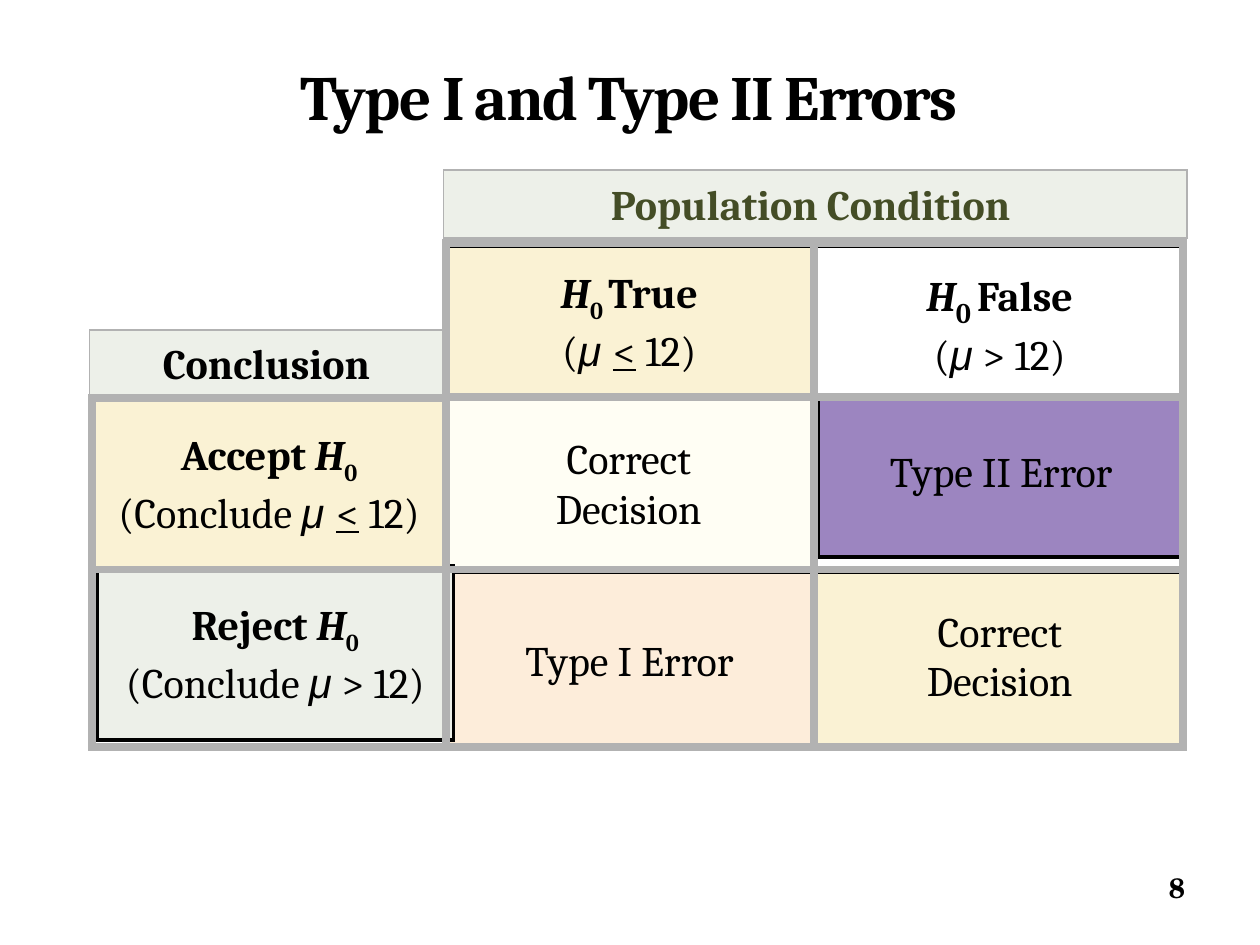
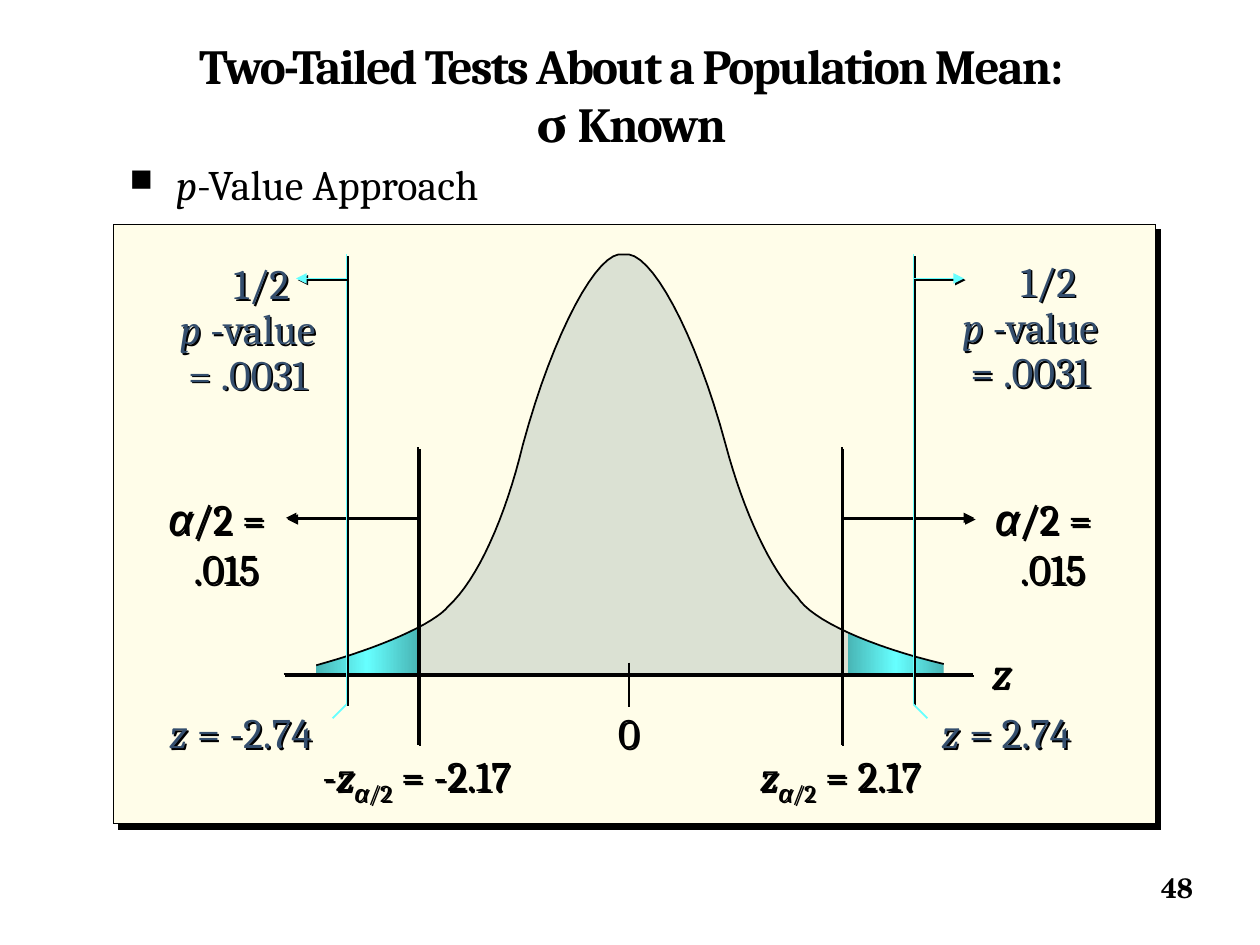
import copy
from dataclasses import dataclass

import lxml.etree
import pptx
import pptx.dml.color
import pptx.enum.shapes
import pptx.enum.text
import pptx.oxml.ns
import pptx.util

Inches = pptx.util.Inches
Pt = pptx.util.Pt
qn = pptx.oxml.ns.qn
ALIGN = pptx.enum.text.PP_ALIGN
ANCHOR = pptx.enum.text.MSO_ANCHOR
RECTANGLE = pptx.enum.shapes.MSO_SHAPE.RECTANGLE
STRAIGHT = pptx.enum.shapes.MSO_CONNECTOR.STRAIGHT


@dataclass(frozen=True)
class Theme:
    serif: str = "Cambria"
    greek: str = "Arial"
    number_font: str = "TeX Gyre Schola"
    title: int = 36
    long_title: int = 28
    body: int = 24
    axis: int = 26
    large_subscript: int = 28
    page_number: int = 16
    black: str = "000000"
    white: str = "FFFFFF"
    grid: str = "B2B2B2"
    sage: str = "EDF0E9"
    cream: str = "FAF2D4"
    ivory: str = "FFFEF4"
    peach: str = "FDEDDA"
    purple: str = "9C85C0"
    olive: str = "444D26"
    panel: str = "FFFDE9"
    bell: str = "DBE1D3"
    cyan: str = "66FFFF"
    teal: str = "49B6B6"
    navy: str = "344E6D"


THEME = Theme()
CENTER = 5.0
BASELINE = 5.35
CRITICAL = 1.68
OBSERVED = 2.25
BELL_KNOTS = [
    (2.51, 5.28), (3.02, 5.14), (3.45, 4.95), (3.56, 4.81),
    (3.79, 4.6), (4.01, 4.11), (4.15, 3.53),
    (4.39, 2.64), (4.75, 1.97), (4.95, 2.02),
    (5.16, 1.97), (5.52, 2.64), (5.76, 3.53),
    (5.9, 4.06), (6.12, 4.53), (6.33, 4.74),
    (6.44, 4.92), (6.9, 5.13), (7.49, 5.27),
]


def rgb(value):
    return pptx.dml.color.RGBColor.from_string(value)


def lengths(values):
    return [Inches(value) for value in values]


def add_effects(shape, shadow=None):
    effects = lxml.etree.SubElement(shape._element.spPr, qn("a:effectLst"))
    if shadow:
        outer = lxml.etree.SubElement(
            effects, qn("a:outerShdw"), blurRad="0", dist=str(Pt(shadow)),
            dir="2700000", algn="tl", rotWithShape="0")
        lxml.etree.SubElement(outer, qn("a:srgbClr"), val=THEME.black)


def write(frame, paragraphs, size=THEME.body, color=THEME.black, anchor=ANCHOR.TOP,
          align=ALIGN.CENTER, spacing=None, font=THEME.serif):
    frame.word_wrap = False
    frame.auto_size = pptx.enum.text.MSO_AUTO_SIZE.NONE
    frame.vertical_anchor = anchor
    for index, spans in enumerate(paragraphs):
        para = frame.paragraphs[0] if index == 0 else frame.add_paragraph()
        para.alignment = align
        if spacing:
            para.line_spacing = spacing
        for text, flags in spans:
            span = para.add_run()
            span.text = text
            span.font.name = THEME.greek if "g" in flags else font
            span.font.size = Pt(THEME.large_subscript if "L" in flags else size)
            span.font.color.rgb = rgb(color)
            span.font.bold = "b" in flags
            span.font.italic = "i" in flags
            span.font.underline = "u" in flags
            if "s" in flags:
                span.font._element.set("baseline", "-25000")


def add_title(page, lines, area, size):
    title = page.shapes.title
    title.left, title.top, title.width, title.height = lengths(area)
    write(title.text_frame, lines, size, anchor=ANCHOR.MIDDLE)
    for para in title.text_frame.paragraphs:
        for span in para.runs:
            span.font._element.set("spc", "-100")
            if span.text.startswith("σ"):
                span.font.name = THEME.number_font


def add_label(page, area, paragraphs, shadow=1.4, **style):
    box = page.shapes.add_textbox(*lengths(area))
    write(box.text_frame, paragraphs, **style)
    if shadow:
        add_effects(box, shadow)
    return box


def add_page_number(page, number):
    add_label(page, (9.07, 6.86, 0.54, 0.37), [[(number, "b")]], shadow=None,
              size=THEME.page_number, font=THEME.number_font)


def add_panel(page, area, fill=None, line=THEME.black, width=2.25, shadow=None):
    panel = page.shapes.add_shape(RECTANGLE, *lengths(area))
    if fill:
        panel.fill.solid()
        panel.fill.fore_color.rgb = rgb(fill)
    else:
        panel.fill.background()
    panel.line.color.rgb = rgb(line)
    panel.line.width = Pt(width)
    lxml.etree.SubElement(panel.line._get_or_add_ln(), qn("a:miter"), lim="800000")
    add_effects(panel, shadow)
    return panel


def add_cell(page, area, fill, paragraphs, color=THEME.black, spacing=None, **border):
    cell = add_panel(page, area, fill, **border)
    write(cell.text_frame, paragraphs, color=color, anchor=ANCHOR.MIDDLE, spacing=spacing)
    return cell


def add_line(page, start, end, color=THEME.black, width=1, shadow=None, arrow=False):
    line = page.shapes.add_connector(STRAIGHT, *lengths(start + end))
    line.line.color.rgb = rgb(color)
    line.line.width = Pt(width)
    if arrow:
        lxml.etree.SubElement(line.line._get_or_add_ln(), qn("a:tailEnd"), type="triangle")
    add_effects(line, shadow)


def add_outline(page, points, closed):
    vertices = [lengths(point) for point in points]
    builder = page.shapes.build_freeform(*vertices[0])
    builder.add_line_segments(vertices[1:], close=closed)
    outline = builder.convert_to_shape()
    outline.shadow.inherit = False
    return outline


def add_area(page, curve, fill=None):
    base = [(curve[-1][0], BASELINE), (curve[0][0], BASELINE)]
    area = add_outline(page, curve + base, True)
    area.line.fill.background()
    if fill:
        area.fill.solid()
        area.fill.fore_color.rgb = rgb(fill)
        return
    area.fill.gradient()
    area.fill.gradient_angle = 0
    first, last = area.fill.gradient_stops
    for stop in (first, last):
        stop.color.rgb = rgb(THEME.teal)
    first.position, last.position = 0, 1
    stops = area._element.spPr.find(qn("a:gradFill")).find(qn("a:gsLst"))
    middle = copy.deepcopy(stops[0])
    middle.set("pos", "50000")
    middle[0].set("val", THEME.cyan)
    stops.insert(1, middle)


def bell_curve(steps=16):
    points = [BELL_KNOTS[0]]
    for start in range(0, len(BELL_KNOTS) - 1, 3):
        controls = BELL_KNOTS[start:start + 4]
        for step in range(1, steps + 1):
            t = step / steps
            weights = ((1 - t) ** 3, 3 * t * (1 - t) ** 2, 3 * t ** 2 * (1 - t), t ** 3)
            points.append(tuple(
                sum(weight * point[axis] for weight, point in zip(weights, controls))
                for axis in (0, 1)))
    return points


def build_error_table(page):
    add_title(page, [[("Type I and Type II Errors", "b")]], (0.74, 0.34, 8.5, 0.83), THEME.title)
    at_most = [("μ ", "gi"), ("<", "u"), (" 12)", "")]
    above = [("μ", "gi"), (" > 12)", "")]
    correct = [[("Correct", "")], [("Decision", "")]]
    hypothesis = [("H", "bi"), ("0", "bs")]
    add_cell(page, (3.53, 3.15, 2.92, 1.36), THEME.ivory, correct)
    add_cell(page, (6.49, 3.06, 2.91, 1.36), THEME.purple, [[("Type II Error", "")]])
    decision = add_cell(page, (6.48, 4.54, 2.91, 1.39), THEME.cream, correct, spacing=0.8)
    decision.text_frame.paragraphs[1].space_before = Pt(5)
    add_cell(page, (3.54, 4.54, 2.91, 1.39), THEME.peach, [[("Type I Error", "")]])
    add_cell(page, (0.77, 4.49, 2.83, 1.38), THEME.sage,
             [[("Reject ", "b")] + hypothesis, [("(Conclude ", "")] + above])
    add_cell(page, (0.74, 3.15, 2.79, 1.36), THEME.cream,
             [[("Accept ", "b")] + hypothesis, [("(Conclude ", "")] + at_most])
    add_cell(page, (3.54, 1.95, 2.91, 1.19), THEME.cream,
             [[("H", "bi"), ("0 ", "bs"), ("True", "b")], [("(", "")] + at_most])
    add_cell(page, (6.48, 1.95, 2.91, 1.19), THEME.white,
             [[("H", "bi"), ("0 ", "bsL"), ("False", "b")], [("(", "")] + above])
    header = {"line": THEME.grid, "width": 1}
    add_cell(page, (0.71, 2.62, 2.81, 0.52), THEME.sage, [[("Conclusion", "b")]], **header)
    add_cell(page, (3.52, 1.35, 5.9, 0.54), THEME.sage, [[("Population Condition ", "b")]],
             color=THEME.olive, **header)
    for frame in ((3.54, 1.93, 5.85, 4), (0.73, 3.16, 2.81, 2.77)):
        add_panel(page, frame, line=THEME.grid, width=4.5)
    for start, end in (((6.46, 1.96), (6.46, 5.92)), ((3.53, 3.15), (9.39, 3.15)),
                       ((0.74, 4.52), (9.39, 4.52))):
        add_line(page, start, end, THEME.grid, 4.5)
    add_page_number(page, "8")


def add_tail_markers(page, side):
    critical = CENTER + side * CRITICAL
    observed = CENTER + side * OBSERVED
    dark = {"shadow": 1.4}
    bright = {"color": THEME.cyan, "shadow": 1.4}
    add_line(page, (critical, 3.55), (critical, 5.91), **dark)
    add_line(page, (critical, 4.11), (critical + side * 1.05, 4.11), arrow=True, **dark)
    add_line(page, (observed, 2.02), (observed, 5.59), **bright)
    add_line(page, (observed, 5.59), (observed + side * 0.11, 5.7), color=THEME.cyan)
    add_line(page, (observed, 2.21), (observed + side * 0.4, 2.21), arrow=True, **bright)
    alpha = add_label(page, (CENTER + side * 3.28 - 0.53, 3.86, 1.06, 0.9),
                      [[("α", "gi"), ("/2 =", "")], [(".015", "")]])
    indent(alpha.text_frame.paragraphs[1], 0.15)


def indent(para, left, first=0):
    properties = para._p.get_or_add_pPr()
    properties.set("marL", str(Inches(left)))
    properties.set("indent", str(Inches(first)))
    return properties


def add_bullet(page, area, spans):
    box = add_label(page, area, [spans], shadow=None, align=ALIGN.LEFT)
    properties = indent(box.text_frame.paragraphs[0], 0.37, -0.37)
    lxml.etree.SubElement(properties, qn("a:buSzPct"), val="75000")
    lxml.etree.SubElement(properties, qn("a:buChar"), char="■")


def build_two_tailed_test(page):
    add_title(page, [[("Two-Tailed Tests About a Population Mean:", "b")],
                     [("σ", "b"), (" Known", "b")]], (0.76, 0.3, 8.5, 0.89), THEME.long_title)
    add_bullet(page, (0.93, 1.21, 3.3, 0.5), [("p", "i"), ("-Value Approach", "")])
    add_panel(page, (0.9, 1.78, 8.27, 4.76), THEME.panel, width=0.5, shadow=4.2)
    curve = bell_curve()
    add_area(page, curve, THEME.bell)
    add_area(page, [point for point in curve if point[0] <= CENTER - CRITICAL])
    add_area(page, [point for point in curve if point[0] >= CENTER + CRITICAL])
    outline = add_outline(page, curve, False)
    outline.fill.background()
    outline.line.color.rgb = rgb(THEME.black)
    outline.line.width = Pt(1)
    add_line(page, (2.25, BASELINE), (7.72, BASELINE), shadow=1.4)
    add_line(page, (4.99, 5.26), (4.99, 5.61))
    for side in (-1, 1):
        add_tail_markers(page, side)
    critical_name = [("z", "i"), ("α", "gis"), ("/2", "s")]
    add_label(page, (4.81, 5.56, 0.36, 0.5), [[("0", "")]])
    add_label(page, (7.77, 5.06, 0.36, 0.53), [[("z", "i")]], size=THEME.axis)
    add_label(page, (5.83, 5.9, 1.68, 0.5), [critical_name + [(" = 2.17", "")]])
    add_label(page, (2.35, 5.9, 1.91, 0.5), [[("-", "")] + critical_name + [(" = -2.17", "")]])
    add_label(page, (7.33, 5.56, 1.31, 0.5), [[("z", "i"), (" = 2.74", "")]], color=THEME.navy)
    add_label(page, (1.2, 5.56, 1.42, 0.5), [[("z", "i"), (" = -2.74", "")]], color=THEME.navy)
    half_value = [[("1/2", "")], [("p ", "i"), ("-value", "")], [("= .0031", "")]]
    for left, top, shift in ((1.27, 2.04, 0.22), (7.48, 2.02, 0.29)):
        label = add_label(page, (left, top, 1.39, 1.19), half_value,
                          color=THEME.navy, spacing=0.9)
        indent(label.text_frame.paragraphs[0], shift)
    add_page_number(page, "48")


def main():
    deck = pptx.Presentation()
    deck.slide_width, deck.slide_height = lengths((10, 7.5))
    for build in (build_error_table, build_two_tailed_test):
        build(deck.slides.add_slide(deck.slide_layouts[5]))
    deck.save("out.pptx")


if __name__ == "__main__":
    main()
